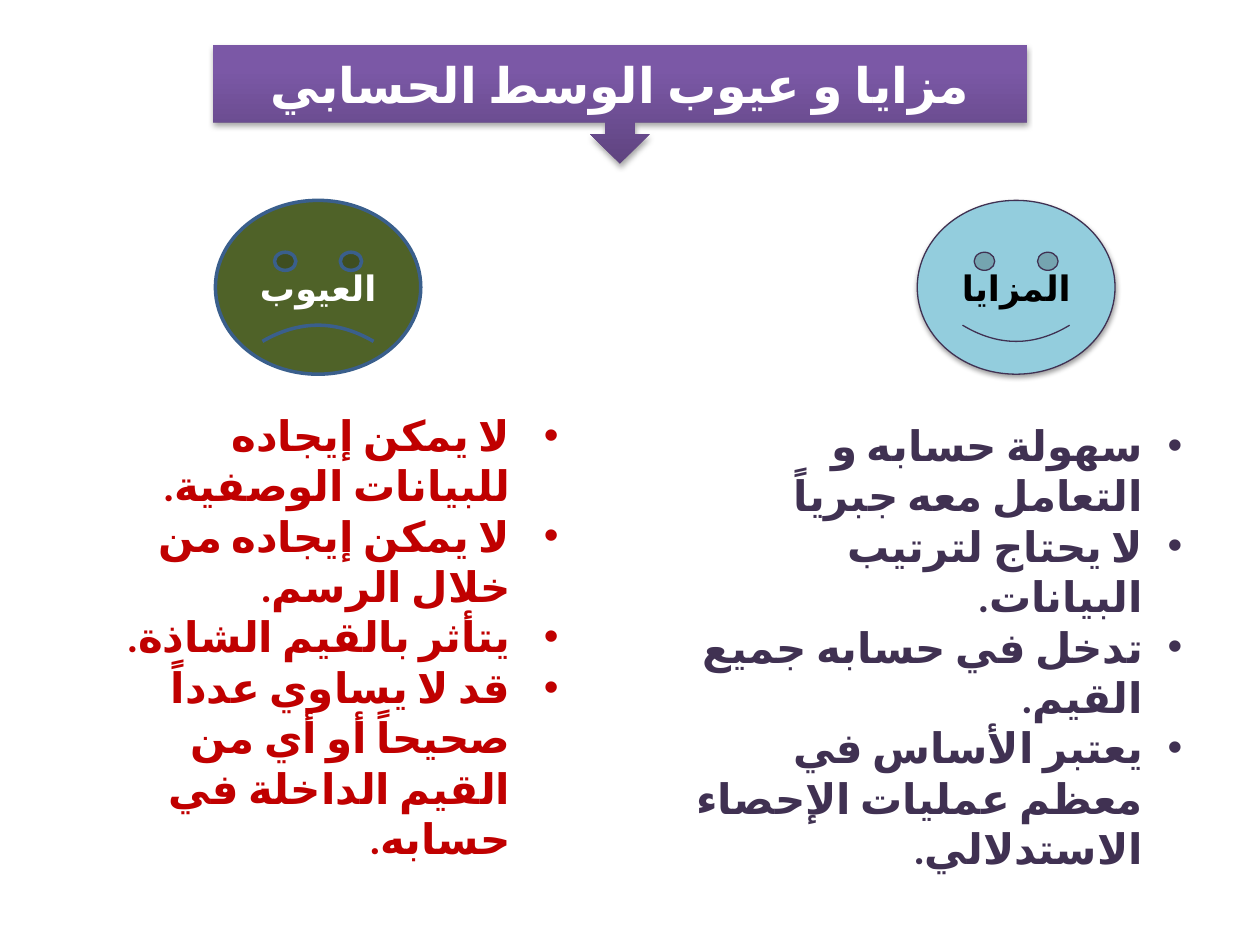
from lxml import etree
from pptx import Presentation
from pptx.dml.color import RGBColor
from pptx.enum.shapes import MSO_SHAPE
from pptx.enum.text import MSO_ANCHOR, MSO_AUTO_SIZE, PP_ALIGN
from pptx.oxml.ns import qn
from pptx.util import Inches, Pt

CALLOUT, FACE = MSO_SHAPE.DOWN_ARROW_CALLOUT, MSO_SHAPE.SMILEY_FACE
CENTER, RIGHT = PP_ALIGN.CENTER, PP_ALIGN.RIGHT
MIDDLE = MSO_ANCHOR.MIDDLE
GROW = MSO_AUTO_SIZE.SHAPE_TO_FIT_TEXT

COLORS = {
    "white": "FFFFFF", "black": "000000",
    "purple_dark": "5F4480", "purple": "7B58A6", "purple_light": "7C57A8",
    "sky": "93CDDD", "plum": "403152",
    "olive": "4F6228", "blue": "3A5F8C", "red": "C00000",
}


def rgb(name):
    return RGBColor.from_string(COLORS[name])


class SlideBuilder:
    """Places elements on a grid of 100 columns by 75 rows."""
    COLUMNS, ROWS = 100, 75

    def __init__(self, presentation):
        self.slide = presentation.slides.add_slide(presentation.slide_layouts[6])
        self.column = presentation.slide_width / self.COLUMNS
        self.row = presentation.slide_height / self.ROWS

    def box(self, left, top, width, height):
        return (round(left * self.column), round(top * self.row),
                round(width * self.column), round(height * self.row))

    def shape(self, kind, place, fill, text, size, color, font="Calibri",
              line=None, shadow=None):
        shape = self.slide.shapes.add_shape(kind, *self.box(*place))
        if isinstance(fill, dict):
            self.gradient(shape, fill)
        else:
            shape.fill.solid()
            shape.fill.fore_color.rgb = rgb(fill)
        if line:
            shape.line.color.rgb, shape.line.width = rgb(line[0]), Pt(line[1])
        else:
            shape.line.fill.background()
        shape.shadow.inherit = False
        if shadow:
            self.drop_shadow(shape, *shadow)
        frame = shape.text_frame
        frame.vertical_anchor = MIDDLE
        frame.text = text
        self.format(frame.paragraphs[0], CENTER, size, color, font)
        return shape

    def bullets(self, place, lines, color, indent):
        shape = self.slide.shapes.add_textbox(*self.box(*place))
        frame = shape.text_frame
        frame.word_wrap = True
        frame.auto_size = GROW
        frame.text = "\n".join(lines)
        for paragraph in frame.paragraphs:
            self.format(paragraph, RIGHT, 24, color)
            properties = paragraph._p.get_or_add_pPr()
            properties.set("marL", str(Inches(indent)))
            properties.set("indent", str(-Inches(indent)))
            etree.SubElement(properties, qn("a:buFont"), typeface="Arial")
            etree.SubElement(properties, qn("a:buChar"), char="•")

    def format(self, paragraph, alignment, size, color, font="Calibri"):
        paragraph.alignment = alignment
        paragraph._p.get_or_add_pPr().set("rtl", "1")
        for run in paragraph.runs:
            run.font.size, run.font.bold = Pt(size), True
            run.font.color.rgb = rgb(color)
            run.font.name = font
            properties = run._r.get_or_add_rPr()
            properties.set("lang", "ar-SA")
            etree.SubElement(properties, qn("a:cs"), typeface=font)

    def gradient(self, shape, stops):
        shape.fill.gradient()
        shape.fill.gradient_angle = 90  # runs from bottom to top
        stop_list = shape._element.spPr.find(".//" + qn("a:gsLst"))
        for stop in list(stop_list):
            stop_list.remove(stop)
        for position, color in stops.items():
            stop = etree.SubElement(stop_list, qn("a:gs"), pos=str(position * 1000))
            etree.SubElement(stop, qn("a:srgbClr"), val=COLORS[color])

    def drop_shadow(self, shape, opacity, blur, distance):
        effects = shape._element.spPr.find(qn("a:effectLst"))
        outer = etree.SubElement(
            effects, qn("a:outerShdw"), blurRad=str(Pt(blur)),
            dist=str(Pt(distance)), dir="5400000", rotWithShape="0")
        color = etree.SubElement(outer, qn("a:srgbClr"), val=COLORS["black"])
        etree.SubElement(color, qn("a:alpha"), val=str(opacity * 1000))


def main():
    presentation = Presentation()
    presentation.slide_width, presentation.slide_height = Inches(10), Inches(7.5)
    builder = SlideBuilder(presentation)

    # Title callout
    builder.shape(CALLOUT, (16.9, 3.6, 64.6, 9.4),
                  {0: "purple_dark", 80: "purple", 100: "purple_light"},
                  "مزايا و عيوب الوسط الحسابي", 28, "white", "Roboto",
                  shadow=(35, 3.1, 1.8))

    # Happy face for advantages, sad face for drawbacks
    builder.shape(FACE, (72.8, 15.9, 15.7, 13.8), "sky", "المزايا", 20, "black",
                  line=("plum", 0.75), shadow=(38, 3.1, 1.6))
    sad_face = builder.shape(FACE, (17.1, 15.9, 16.3, 13.8), "olive", "العيوب",
                             20, "white", line=("blue", 2))
    sad_face.adjustments[0] = -0.05

    # Advantages
    builder.bullets((53.9, 32.8, 40.9, 33.3), [
        "سهولة حسابه و التعامل معه جبرياً",
        "لا يحتاج لترتيب البيانات.",
        "تدخل في حسابه جميع القيم.",
        "يعتبر الأساس في معظم عمليات الإحصاء الاستدلالي.",
    ], "plum", 0.31)

    # Drawbacks
    builder.bullets((5.1, 32, 40.2, 33.3), [
        "لا يمكن إيجاده للبيانات الوصفية.",
        "لا يمكن إيجاده من خلال الرسم.",
        "يتأثر بالقيم الشاذة.",
        "قد لا يساوي عدداً صحيحاً أو أي من القيم الداخلة في حسابه.",
    ], "red", 0.38)

    presentation.save("out.pptx")


if __name__ == "__main__":
    main()
